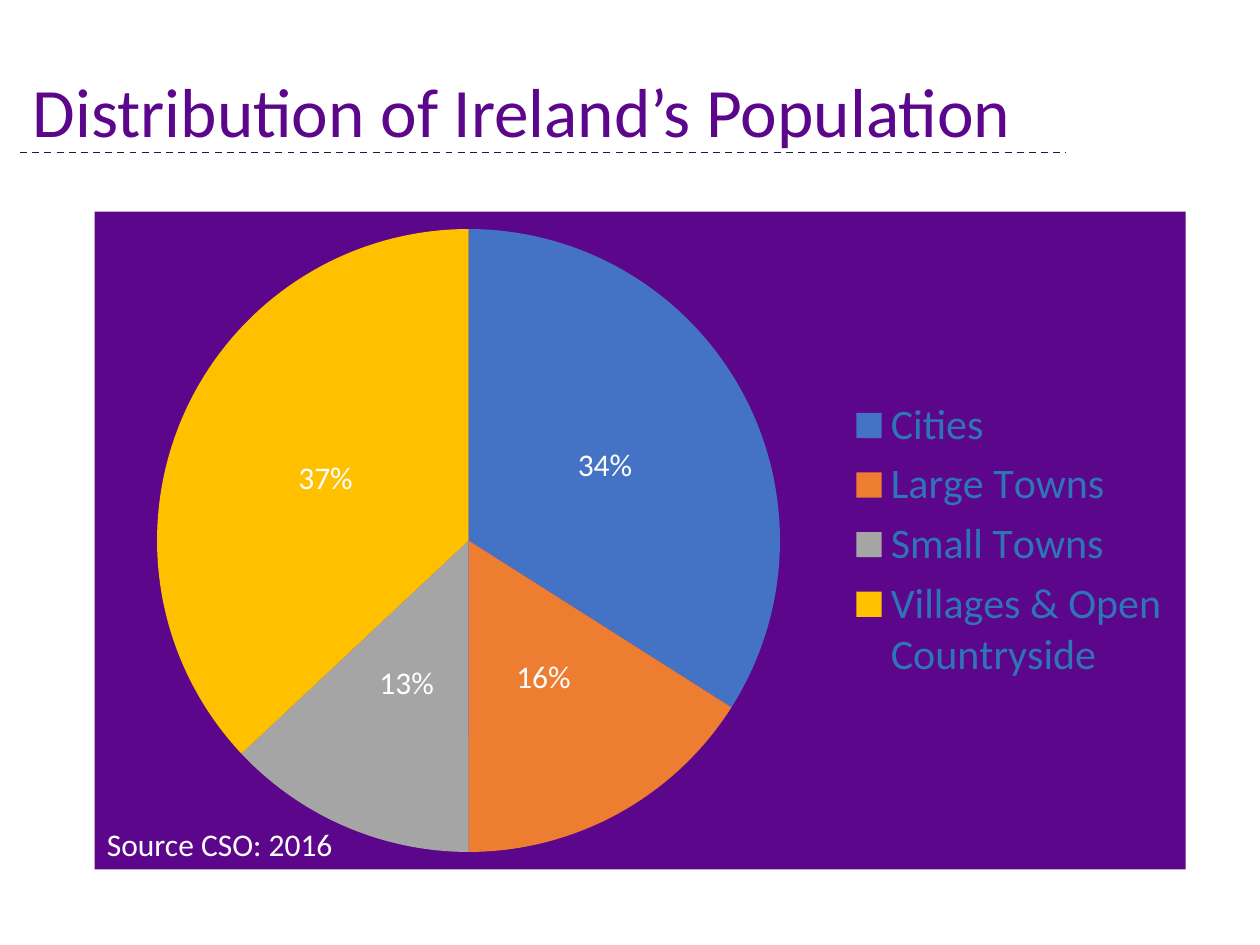
"""Build a slide with a pie chart of how Ireland's population is distributed."""
import dataclasses

import lxml.etree
import pptx
import pptx.chart.data
import pptx.dml.color
import pptx.enum.chart
import pptx.enum.dml
import pptx.enum.shapes
import pptx.enum.text
import pptx.oxml
import pptx.oxml.ns
import pptx.util

Inches = pptx.util.Inches


@dataclasses.dataclass(frozen=True)
class Theme:
    font: str = "Calibri"
    purple: str = "5C068C"
    rule: str = "211551"
    legend: str = "2E75B6"
    white: str = "FFFFFF"
    black: str = "000000"
    slices: tuple = ("4472C4", "ED7D31", "A5A5A5", "FFC000")
    title_size: float = 39.6
    legend_size: float = 24
    body_size: float = 18


def set_attributes(target, values):
    for name, value in values.items():
        setattr(target, name, value)


def rgb(color):
    return pptx.dml.color.RGBColor.from_string(color)


class SlideBuilder:
    def __init__(self, slide, theme):
        self.slide = slide
        self.theme = theme

    def style_font(self, font, size, color):
        set_attributes(font, {"name": self.theme.font, "size": pptx.util.Pt(size)})
        font.color.rgb = rgb(color)

    def add_title(self, text, left, top, width, height):
        title = self.slide.shapes.title
        set_attributes(title, {"left": Inches(left), "top": Inches(top),
                               "width": Inches(width), "height": Inches(height)})
        frame = title.text_frame
        set_attributes(frame, {"text": text, "word_wrap": True,
                               "auto_size": pptx.enum.text.MSO_AUTO_SIZE.NONE,
                               "vertical_anchor": pptx.enum.text.MSO_ANCHOR.MIDDLE})
        paragraph = frame.paragraphs[0]
        set_attributes(paragraph, {"alignment": pptx.enum.text.PP_ALIGN.LEFT,
                                   "line_spacing": 0.9})
        self.style_font(paragraph.runs[0].font, self.theme.title_size, self.theme.purple)

    def add_rule(self, left, top, width):
        rule = self.slide.shapes.add_connector(
            pptx.enum.shapes.MSO_CONNECTOR.STRAIGHT,
            Inches(left), Inches(top), Inches(left + width), Inches(top))
        set_attributes(rule.line, {"width": pptx.util.Pt(1),
                                   "dash_style": pptx.enum.dml.MSO_LINE.DASH})
        rule.line.color.rgb = rgb(self.theme.rule)
        lxml.etree.SubElement(rule.element.spPr, pptx.oxml.ns.qn("a:effectLst"))

    def add_pie(self, name, shares, left, top, width, height):
        data = pptx.chart.data.CategoryChartData(number_format="0%")
        data.categories = list(shares)
        data.add_series(name, list(shares.values()))
        chart = self.slide.shapes.add_chart(
            pptx.enum.chart.XL_CHART_TYPE.PIE, Inches(left), Inches(top),
            Inches(width), Inches(height), data).chart
        set_attributes(chart, {"has_title": False, "has_legend": True})
        self.style_font(chart.font, self.theme.body_size, self.theme.black)
        set_attributes(chart.legend, {"position": pptx.enum.chart.XL_LEGEND_POSITION.RIGHT,
                                      "include_in_layout": False})
        self.style_font(chart.legend.font, self.theme.legend_size, self.theme.legend)
        self.fill_chart(chart, self.theme.purple)

        plot = chart.plots[0]
        set_attributes(plot, {"vary_by_categories": True, "has_data_labels": True})
        set_attributes(plot.data_labels, {
            "show_value": True, "show_percentage": False,
            "number_format": "0%", "number_format_is_linked": False,
            "position": pptx.enum.chart.XL_LABEL_POSITION.CENTER})
        self.style_font(plot.data_labels.font, self.theme.body_size, self.theme.white)
        for index, color in enumerate(self.theme.slices):
            fill = plot.series[0].points[index].format.fill
            fill.solid()
            fill.fore_color.rgb = rgb(color)

    def fill_chart(self, chart, color):
        properties = pptx.oxml.parse_xml(
            f'<c:spPr {pptx.oxml.ns.nsdecls("c", "a")}><a:solidFill>'
            f'<a:srgbClr val="{color}"/></a:solidFill>'
            '<a:ln><a:noFill/></a:ln></c:spPr>')
        chart.element.find(pptx.oxml.ns.qn("c:txPr")).addprevious(properties)

    def add_text(self, text, left, top, width, height):
        frame = self.slide.shapes.add_textbox(
            Inches(left), Inches(top), Inches(width), Inches(height)).text_frame
        set_attributes(frame, {"text": text, "word_wrap": False,
                               "auto_size": pptx.enum.text.MSO_AUTO_SIZE.SHAPE_TO_FIT_TEXT})
        self.style_font(frame.paragraphs[0].runs[0].font,
                        self.theme.body_size, self.theme.white)


def main():
    presentation = pptx.Presentation()
    set_attributes(presentation, {"slide_width": Inches(10), "slide_height": Inches(7.5)})
    slide = presentation.slides.add_slide(presentation.slide_layouts.get_by_name("Title Only"))
    builder = SlideBuilder(slide, Theme())
    builder.add_rule(0.16, 1.21, 8.3)
    builder.add_pie("Series 1", {"Cities": 0.34, "Large Towns": 0.16, "Small Towns": 0.13,
                                 "Villages & Open Countryside": 0.37},
                    0.75, 1.68, 8.66, 5.22)
    builder.add_text("Source CSO: 2016", 0.75, 6.5, 2.01, 0.4)
    builder.add_title("Distribution of Ireland’s Population", 0.16, 0.51, 8.28, 0.8)
    presentation.save("out.pptx")


if __name__ == "__main__":
    main()
